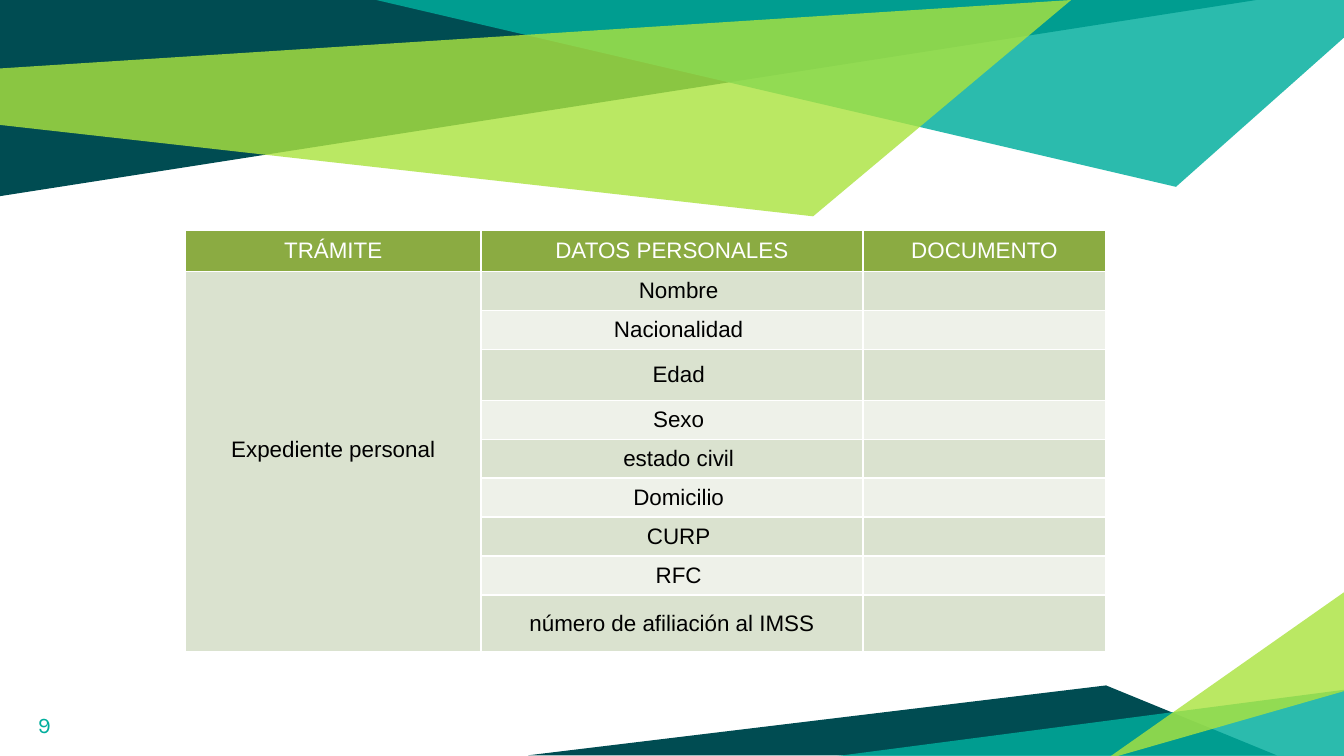
from lxml import etree
from pptx import Presentation
from pptx.dml.color import RGBColor
from pptx.enum.text import MSO_ANCHOR, PP_ALIGN
from pptx.oxml.ns import qn
from pptx.util import Inches, Pt

CENTER = PP_ALIGN.CENTER
MIDDLE = MSO_ANCHOR.MIDDLE

COLORS = {
    "dark": "004C52",
    "teal": "00AE9D",
    "lime": "ABE33F",
    "header": "8BAB42",
    "band_odd": "DAE2CF",
    "band_even": "EEF1E9",
    "white": "FFFFFF",
    "black": "000000",
}

FACETS = [
    ("dark", 100, [(0, 0), (0, 1.46), (9.35, 0)]),
    ("teal", 83, [(2.8, 0), (8.75, 1.39), (10, 0.28), (10, 0)]),
    ("lime", 81, [(-0.01, 0.51), (0, 0.93), (6.05, 1.61), (7.97, 0)]),
    ("dark", 100, [(3.93, 5.62), (9.5, 5.62), (8.23, 5.1)]),
    ("teal", 83, [(10.02, 5.13), (10.02, 5.65), (6.04, 5.65)]),
    ("lime", 81, [(10.01, 5.14), (10.01, 4.4), (8.23, 5.65)]),
]

HEADERS = ["TRÁMITE", "DATOS PERSONALES", "DOCUMENTO"]
PROCEDURE = "Expediente personal"
PERSONAL_DATA = [
    "Nombre", "Nacionalidad", "Edad", "Sexo", "estado civil",
    "Domicilio", "CURP", "RFC", "número de afiliación al IMSS",
]
COL_WIDTHS = [2.2, 2.84, 1.81]
ROW_HEIGHTS = [0.31, 0.29, 0.29, 0.38] + [0.29] * 5 + [0.42]


def rgb(name):
    return RGBColor.from_string(COLORS[name])


def write(p, text, font, color):
    p.text = text
    p.alignment = CENTER
    p.font.size = Pt(12)
    p.font.name = font
    p.font.bold = False
    p.font.color.rgb = rgb(color)


def add_facet(s, color, opacity, points):
    corners = [(Inches(x), Inches(y)) for x, y in points]
    builder = s.shapes.build_freeform(*corners[0])
    builder.add_line_segments(corners[1:], close=True)
    sp = builder.convert_to_shape()
    sp.shadow.inherit = False
    sp.line.fill.background()
    sp.fill.solid()
    sp.fill.fore_color.rgb = rgb(color)
    if opacity < 100:
        clr = sp.fill._xPr.find(qn("a:solidFill"))[0]
        etree.SubElement(clr, qn("a:alpha"), val=str(opacity * 1000))


def add_page_number(s, number):
    tf = s.shapes.add_textbox(Inches(0.03), Inches(5.19), Inches(0.6), Inches(0.43)).text_frame
    tf.word_wrap = True
    tf.margin_left = tf.margin_right = tf.margin_top = tf.margin_bottom = Inches(0.1)
    write(tf.paragraphs[0], number, "Karla", "teal")


def style_cell(cell, text, fill, color, indent=0):
    p = cell.text_frame.paragraphs[0]
    write(p, text, "Arial", color)
    etree.SubElement(p._p, qn("a:endParaRPr"), sz="1200")
    cell.vertical_anchor = MIDDLE
    cell.margin_left = Inches(0.07 + indent)
    cell.margin_right = Inches(0.07)
    cell.margin_top = cell.margin_bottom = Inches(0.04)
    cell.fill.solid()
    cell.fill.fore_color.rgb = rgb(fill)


def add_data_table(s):
    table = s.shapes.add_table(
        len(ROW_HEIGHTS), len(COL_WIDTHS), Inches(1.38), Inches(1.71),
        Inches(sum(COL_WIDTHS)), Inches(sum(ROW_HEIGHTS))).table
    for col, width in zip(table.columns, COL_WIDTHS):
        col.width = Inches(width)
    for row, height in zip(table.rows, ROW_HEIGHTS):
        row.height = Inches(height)
    for c, header in enumerate(HEADERS):
        style_cell(table.cell(0, c), header, "header", "white")
    last = len(PERSONAL_DATA)
    for r, item in enumerate(PERSONAL_DATA, 1):
        band = "band_odd" if r % 2 else "band_even"
        style_cell(table.cell(r, 0), PROCEDURE if r == 1 else "", "band_odd", "black")
        style_cell(table.cell(r, 1), item, band, "black", indent=0.1 if r < last else 0)
        style_cell(table.cell(r, 2), "", band, "black")
    procedure = table.cell(1, 0)
    procedure.merge(table.cell(last, 0))
    procedure.margin_bottom = Inches(0.21)


def main():
    prs = Presentation()
    prs.slide_width, prs.slide_height = Inches(10), Inches(10 * 9 / 16)
    s = prs.slides.add_slide(prs.slide_layouts[6])
    for facet in FACETS:
        add_facet(s, *facet)
    add_page_number(s, "9")
    add_data_table(s)
    prs.save("out.pptx")


if __name__ == "__main__":
    main()
